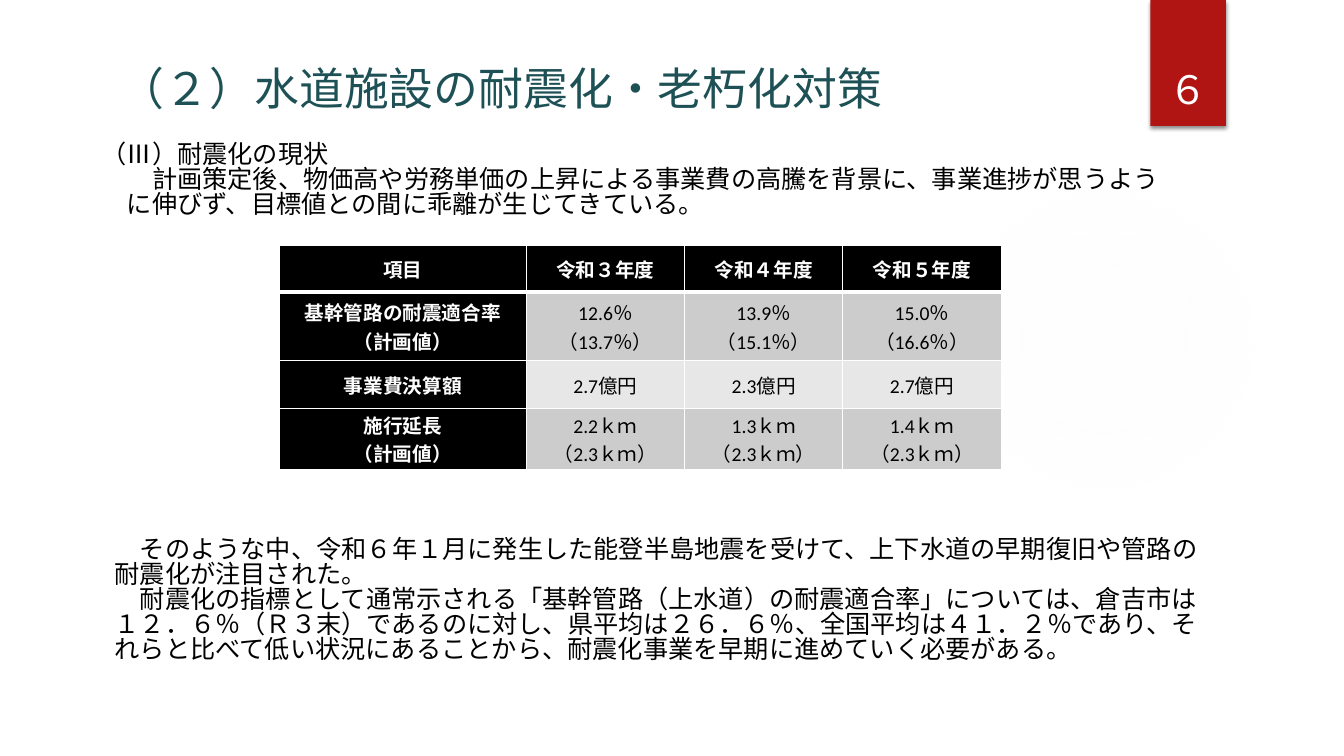
from lxml import etree
from pptx import Presentation
from pptx import util as u
from pptx.dml.color import RGBColor
from pptx.enum import shapes, text
from pptx.oxml import parse_xml
from pptx.oxml.ns import nsdecls, qn

# Content
TITLE = "（２）水道施設の耐震化・老朽化対策"
PAGE_NUMBER = "６"
STATUS = [
    "（Ⅲ）耐震化の現状",
    "　　計画策定後、物価高や労務単価の上昇による事業費の高騰を背景に、事業進捗が思うよう",
    "　に伸びず、目標値との間に乖離が生じてきている。",
]
OUTLOOK = [
    "　そのような中、令和６年１月に発生した能登半島地震を受けて、上下水道の早期復旧や管路の"
    "耐震化が注目された。",
    "　耐震化の指標として通常示される「基幹管路（上水道）の耐震適合率」については、倉吉市は"
    "１２．６％（Ｒ３末）であるのに対し、県平均は２６．６％、全国平均は４１．２％であり、"
    "それらと比べて低い状況にあることから、耐震化事業を早期に進めていく必要がある。",
]
ROWS = [
    ["項目", "令和３年度", "令和４年度", "令和５年度"],
    ["基幹管路の耐震適合率\n（計画値）", "12.6％\n（13.7％）", "13.9％\n（15.1％）", "15.0％\n（16.6％）"],
    ["事業費決算額", "2.7億円", "2.3億円", "2.7億円"],
    ["施行延長\n（計画値）", "2.2ｋｍ\n（2.3ｋｍ）", "1.3ｋｍ\n（2.3ｋｍ）", "1.4ｋｍ\n（2.3ｋｍ）"],
]
COLUMN_WIDTHS = [2.45, 1.57, 1.57, 1.57]
ROW_HEIGHTS = [0.47, 0.68, 0.47, 0.61]
BANDS = ["CCCCCC", "E7E7E7"]
BLACK, WHITE, RED, TEAL = "000000", "FFFFFF", "B01513", "1E5155"


def color(value):
    return RGBColor.from_string(value)


def write(frame, lines, size=18, ink=BLACK, font="Calibri", bold=False,
          align=text.PP_ALIGN.LEFT, spacing=None):
    frame.word_wrap = True
    for index, line in enumerate(lines):
        para = frame.paragraphs[0] if index == 0 else frame.add_paragraph()
        para.alignment = align
        para.space_before = u.Pt(0)
        if spacing:
            para.line_spacing = spacing
        span = para.add_run()
        span.text = line
        span.font.size = u.Pt(size)
        span.font.name = font
        span.font.bold = bold
        span.font.color.rgb = color(ink)


def add_text(page, place, lines, **style):
    box = page.shapes.add_textbox(*map(u.Inches, place))
    box.text_frame.vertical_anchor = text.MSO_ANCHOR.BOTTOM
    write(box.text_frame, lines, **style)
    return box


def add_plain_shape(page, kind, place):
    shape = page.shapes.add_shape(kind, *map(u.Inches, place))
    shape.shadow.inherit = False
    shape.line.fill.background()
    return shape


def add_border(cell, side, points):
    line = etree.SubElement(cell._tc.get_or_add_tcPr(), qn("a:" + side), w=str(u.Pt(points)))
    fill = etree.SubElement(line, qn("a:solidFill"))
    etree.SubElement(fill, qn("a:srgbClr"), val=WHITE)


deck = Presentation()
deck.slide_width, deck.slide_height = u.Inches(13.33), u.Inches(7.5)
page = deck.slides.add_slide(deck.slide_layouts[5])

# Faint background glow
glow = add_plain_shape(page, shapes.MSO_SHAPE.OVAL, (9.41, 1.83, 3.08, 3.08))
stops = "".join(
    f'<a:gs pos="{pos}000"><a:srgbClr val="F3F3F3"><a:alpha val="{alpha}000"/></a:srgbClr></a:gs>'
    for pos, alpha in [(0, 7), (36, 6), (69, 0)])
glow._element.spPr.find(qn("a:prstGeom")).addnext(parse_xml(
    f'<a:gradFill {nsdecls("a")}><a:gsLst>{stops}</a:gsLst><a:path path="circle">'
    '<a:fillToRect l="50000" t="50000" r="50000" b="50000"/></a:path></a:gradFill>'))

# Red page marker with a soft shadow
marker = add_plain_shape(page, shapes.MSO_SHAPE.RECTANGLE, (11.41, 0, 0.75, 1.25))
marker.fill.solid()
marker.fill.fore_color.rgb = color(RED)
marker._element.spPr.find(qn("a:effectLst")).append(parse_xml(
    f'<a:outerShdw {nsdecls("a")} blurRad="{u.Pt(3)}" dist="{u.Pt(2)}" dir="5400000" rotWithShape="0">'
    f'<a:srgbClr val="{BLACK}"><a:alpha val="45000"/></a:srgbClr></a:outerShdw>'))
add_text(page, (11.32, 0.32, 0.92, 0.84), [PAGE_NUMBER], size=28, ink=WHITE,
         align=text.PP_ALIGN.CENTER)

# Title
title = page.shapes.title
title.left, title.top, title.width, title.height = map(u.Inches, (1.09, 0.35, 9.65, 0.84))
title.text_frame.vertical_anchor = text.MSO_ANCHOR.BOTTOM
title.text_frame.auto_size = text.MSO_AUTO_SIZE.NONE
write(title.text_frame, [TITLE], size=32, ink=TEAL)

# Body text above and below the table
status = add_text(page, (0.91, 1.3, 10.89, 0.92), STATUS, spacing=0.83)
status.text_frame.paragraphs[0].runs[0].font.name = "Arial"
add_text(page, (1.04, 4.99, 11.1, 1.64), OUTLOOK, spacing=0.83)

# Results table
frame = page.shapes.add_table(
    len(ROWS), len(COLUMN_WIDTHS), u.Inches(2.77), u.Inches(2.43),
    u.Inches(sum(COLUMN_WIDTHS)), u.Inches(sum(ROW_HEIGHTS)))
table = frame.table
for column, width in zip(table.columns, COLUMN_WIDTHS):
    column.width = u.Inches(width)
for row, height in zip(table.rows, ROW_HEIGHTS):
    row.height = u.Inches(height)

for r, values in enumerate(ROWS):
    for c, value in enumerate(values):
        cell = table.cell(r, c)
        heading = r == 0 or c == 0
        cell.vertical_anchor = text.MSO_ANCHOR.MIDDLE
        cell.margin_left = cell.margin_right = u.Inches(0.07)
        cell.margin_top = cell.margin_bottom = 0
        write(cell.text_frame, value.split("\n"), size=14, bold=heading,
              ink=WHITE if heading else BLACK, align=text.PP_ALIGN.CENTER)
        for side in ("lnL", "lnR", "lnT", "lnB"):
            below_header = (r, side) in [(0, "lnB"), (1, "lnT")]
            add_border(cell, side, 3 if below_header else 1)
        cell.fill.solid()
        cell.fill.fore_color.rgb = color(BLACK if heading else BANDS[(r - 1) % 2])

deck.save("out.pptx")
